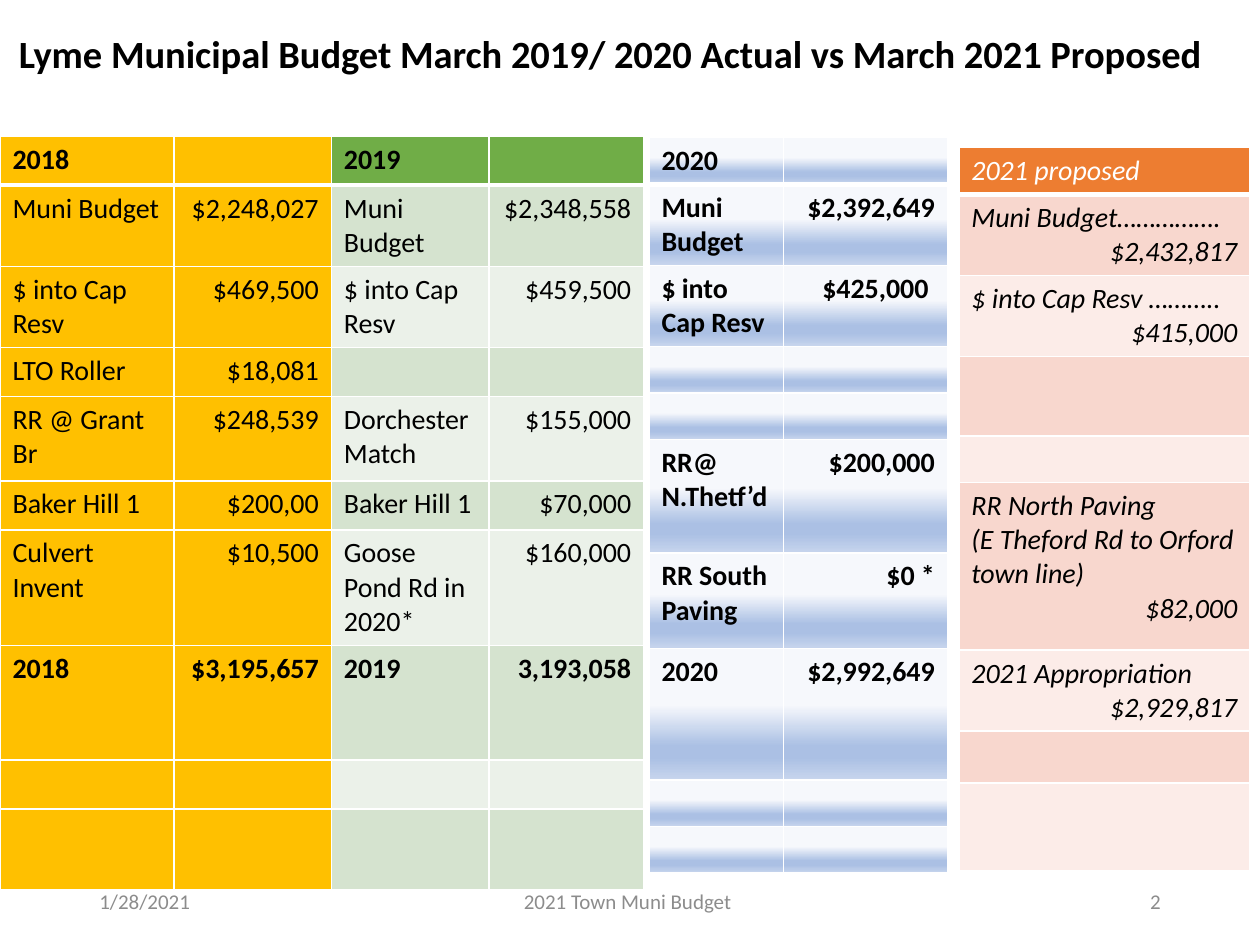
from dataclasses import dataclass
from typing import Optional

from pptx import Presentation
from pptx.dml.color import RGBColor
from pptx.enum.text import MSO_ANCHOR, MSO_AUTO_SIZE, PP_ALIGN
from pptx.oxml import parse_xml
from pptx.oxml.ns import nsdecls
from pptx.util import Inches, Pt

BLACK = RGBColor(0x00, 0x00, 0x00)
WHITE = RGBColor(0xFF, 0xFF, 0xFF)
GREY = RGBColor(0x8C, 0x8C, 0x8C)
GOLD = RGBColor(0xFF, 0xC0, 0x00)
GREEN = RGBColor(0x70, 0xAD, 0x47)
GREEN_BANDS = (RGBColor(0xD5, 0xE3, 0xCF), RGBColor(0xEB, 0xF1, 0xE9))
ORANGE = RGBColor(0xED, 0x7D, 0x31)
ORANGE_BANDS = (RGBColor(0xF8, 0xD7, 0xCE), RGBColor(0xFC, 0xEC, 0xE8))
BLUE_LIGHT = RGBColor(0xF6, 0xF8, 0xFC)
BLUE_MID = RGBColor(0xAB, 0xC0, 0xE4)
BLUE_PALE = RGBColor(0xC7, 0xD5, 0xED)
BLUE_STOPS = ((43, BLUE_LIGHT), (74, BLUE_MID), (83, BLUE_MID), (100, BLUE_PALE))
FONT = "Calibri"


@dataclass
class ColumnFill:
    """Header colour and alternating body colours; no header means blue gradient."""
    header: Optional[RGBColor] = None
    bands: tuple = ()


@dataclass
class BudgetTable:
    left: float
    top: float
    widths: list
    heights: list
    rows: list
    fills: list
    bold_rows: set
    italic: bool = False
    header_color: RGBColor = BLACK


@dataclass
class FooterItem:
    text: str
    left: float
    width: float
    align: PP_ALIGN


GOLD_COLUMN = ColumnFill(GOLD, (GOLD, GOLD))
GREEN_COLUMN = ColumnFill(GREEN, GREEN_BANDS)
BLUE_COLUMN = ColumnFill()

TABLES = [
    # 2018 and 2019
    BudgetTable(
        0, 1.08, [1.38, 1.25, 1.25, 1.23],
        [0.39, 0.64, 0.64, 0.39, 0.67, 0.39, 0.91, 0.91, 0.39, 0.64],
        [["2018", "", "2019", ""],
         ["Muni Budget", "$2,248,027", "Muni Budget", "$2,348,558"],
         ["$ into Cap Resv", "$469,500", "$ into Cap Resv", "$459,500"],
         ["LTO Roller", "$18,081", "", ""],
         ["RR @ Grant Br", "$248,539", "Dorchester Match", "$155,000"],
         ["Baker Hill 1", "$200,00", "Baker Hill 1", "$70,000"],
         ["Culvert Invent", "$10,500", "Goose Pond Rd in 2020*", "$160,000"],
         ["2018", "$3,195,657", "2019", "3,193,058"],
         [""] * 4, [""] * 4],
        [GOLD_COLUMN, GOLD_COLUMN, GREEN_COLUMN, GREEN_COLUMN], {0, 7}),
    # 2020
    BudgetTable(
        5.15, 1.09, [1.07, 1.3],
        [0.37, 0.63, 0.63, 0.37, 0.37, 0.9, 0.76, 1.04, 0.37, 0.37],
        [["2020", ""],
         ["Muni Budget", "$2,392,649"],
         ["$ into Cap Resv", "$425,000 "],
         ["", ""], ["", ""],
         ["RR@ N.Thetf’d", "$200,000"],
         ["RR South Paving", "$0 *"],
         ["2020", "$2,992,649"],
         ["", ""], ["", ""]],
        [BLUE_COLUMN, BLUE_COLUMN], set(range(10))),
    # 2021 proposed
    BudgetTable(
        7.61, 1.17, [2.31],
        [0.37, 0.63, 0.63, 0.63, 0.37, 1.33, 0.63, 0.41, 0.7],
        [["2021 proposed"],
         ["Muni Budget…………….\n$2,432,817"],
         ["$ into Cap Resv ………..\n$415,000"],
         [""], [""],
         ["RR North Paving\n(E Theford Rd to Orford town line)\n$82,000"],
         ["2021 Appropriation\n$2,929,817"],
         [""], [""]],
        [ColumnFill(ORANGE, ORANGE_BANDS)], set(),
        italic=True, header_color=WHITE),
]

FOOTER = [
    FooterItem("1/28/2021", 0.69, 2.25, PP_ALIGN.LEFT),
    FooterItem("2021 Town Muni Budget ", 3.31, 3.38, PP_ALIGN.CENTER),
    FooterItem("2", 7.06, 2.25, PP_ALIGN.RIGHT),
]


def format_para(para, size: float, color: RGBColor, align: PP_ALIGN,
                bold: bool = False, italic: bool = False) -> None:
    para.alignment = align
    for span in para.runs:
        span.font.name = FONT
        span.font.size = Pt(size)
        span.font.color.rgb = color
        span.font.bold = bold
        span.font.italic = italic


def is_amount(text: str) -> bool:
    return "," in text or (text.startswith("$") and text[1].isdigit())


def fill_cell(cell, fill: ColumnFill, row: int) -> None:
    if fill.header is None:
        stops = "".join(
            f'<a:gs pos="{position * 1000}"><a:srgbClr val="{color}"/></a:gs>'
            for position, color in BLUE_STOPS)
        cell._tc.get_or_add_tcPr().append(parse_xml(
            f'<a:gradFill {nsdecls("a")} rotWithShape="1"><a:gsLst>{stops}</a:gsLst>'
            '<a:lin ang="5400000" scaled="0"/></a:gradFill>'))
    else:
        cell.fill.solid()
        cell.fill.fore_color.rgb = fill.bands[(row - 1) % 2] if row else fill.header


def border_cell(cell, row: int) -> None:
    """White lines all round, heavier between the header and the body."""
    properties = cell._tc.get_or_add_tcPr()
    heavy_side = {0: "B", 1: "T"}.get(row)
    for index, side in enumerate("LRTB"):
        width = Pt(3 if side == heavy_side else 1)
        properties.insert(index, parse_xml(
            f'<a:ln{side} {nsdecls("a")} w="{width}"><a:solidFill>'
            f'<a:srgbClr val="{WHITE}"/></a:solidFill></a:ln{side}>'))


def draw_table(page, budget: BudgetTable) -> None:
    frame = page.shapes.add_table(
        len(budget.rows), len(budget.widths), Inches(budget.left), Inches(budget.top),
        Inches(sum(budget.widths)), Inches(sum(budget.heights)))
    table = frame.table
    table.first_row = False
    table.horz_banding = False
    for column, width in zip(table.columns, budget.widths):
        column.width = Inches(width)
    for row, height in enumerate(budget.heights):
        table.rows[row].height = Inches(height)
        color = BLACK if row else budget.header_color
        for column, text in enumerate(budget.rows[row]):
            cell = table.cell(row, column)
            fill_cell(cell, budget.fills[column], row)
            border_cell(cell, row)
            if not text:
                # Keeps empty rows from growing
                cell.margin_top = cell.margin_bottom = 0
                continue
            cell.text_frame.text = text
            for para in cell.text_frame.paragraphs:
                align = PP_ALIGN.RIGHT if is_amount(para.text) else PP_ALIGN.LEFT
                format_para(para, 16, color, align, row in budget.bold_rows, budget.italic)


def draw_title(page) -> None:
    title = page.shapes.title
    title.left, title.top = Inches(-0.22), Inches(0.19)
    title.width, title.height = Inches(10.13), Inches(0.47)
    frame = title.text_frame
    frame.text = "Lyme Municipal Budget March 2019/ 2020 Actual vs March 2021 Proposed"
    frame.word_wrap = True
    frame.auto_size = MSO_AUTO_SIZE.NONE
    frame.vertical_anchor = MSO_ANCHOR.TOP
    format_para(frame.paragraphs[0], 22, BLACK, PP_ALIGN.CENTER, bold=True)


def draw_footer(page, item: FooterItem) -> None:
    box = page.shapes.add_textbox(
        Inches(item.left), Inches(6.95), Inches(item.width), Inches(0.4))
    frame = box.text_frame
    frame.text = item.text
    frame.word_wrap = True
    frame.vertical_anchor = MSO_ANCHOR.MIDDLE
    format_para(frame.paragraphs[0], 12, GREY, item.align)


def main() -> None:
    deck = Presentation()
    deck.slide_width, deck.slide_height = Inches(10), Inches(7.5)
    page = deck.slides.add_slide(deck.slide_layouts[5])
    draw_title(page)
    for budget in TABLES:
        draw_table(page, budget)
    for item in FOOTER:
        draw_footer(page, item)
    deck.save("out.pptx")


if __name__ == "__main__":
    main()
